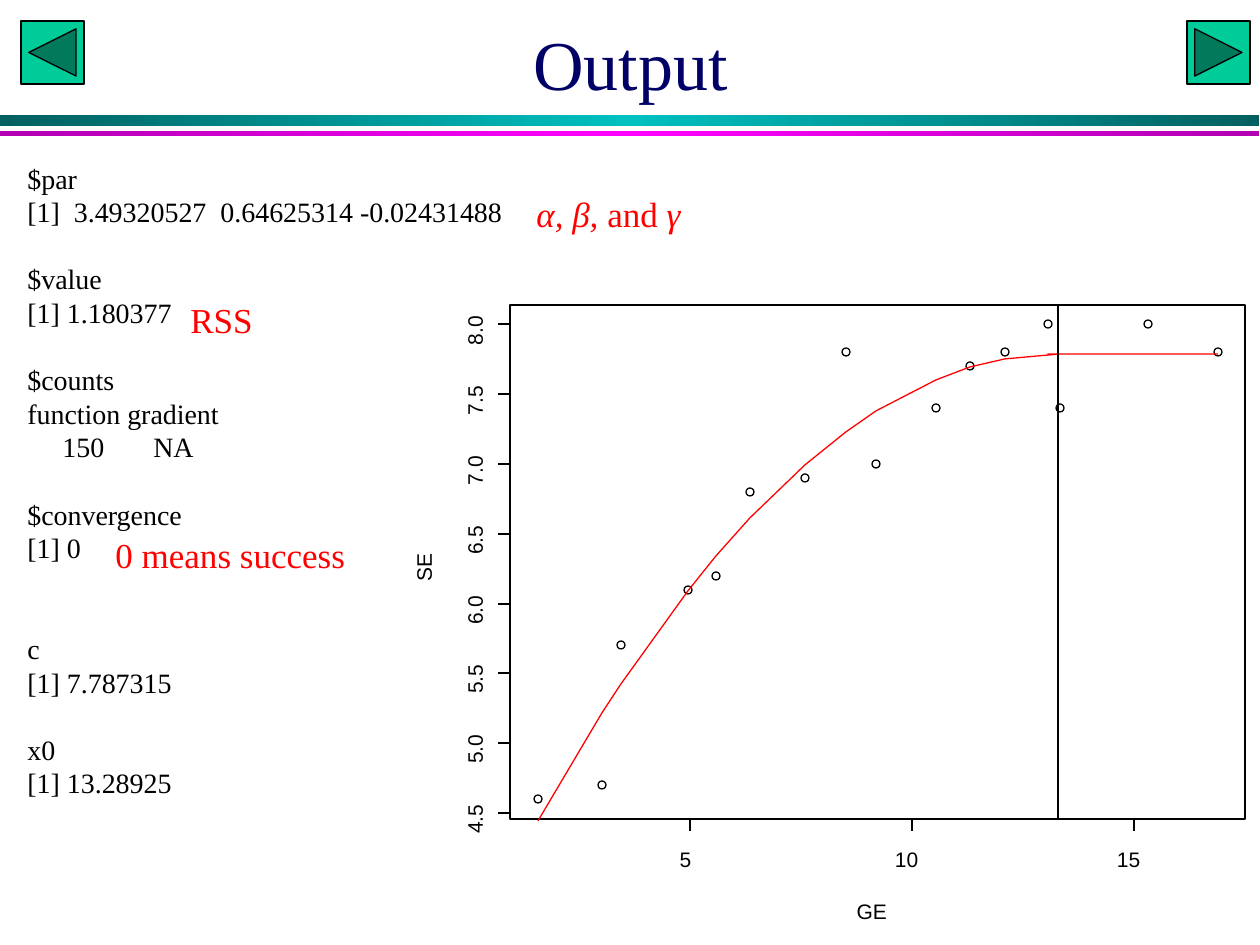
"""Build the Output slide: fitted parameters beside a plateau curve of SE against GE."""
from copy import deepcopy

from lxml.etree import SubElement
from pptx import Presentation
from pptx.dml.color import RGBColor
from pptx.enum.shapes import MSO_CONNECTOR, MSO_SHAPE
from pptx.enum.text import MSO_ANCHOR, PP_ALIGN
from pptx.oxml.ns import qn
from pptx.util import Pt

EMU_PER_PX = 914400 / 126
BLACK = RGBColor(0x00, 0x00, 0x00)
RED = RGBColor(0xFF, 0x00, 0x00)
NAVY = RGBColor(0x00, 0x00, 0x66)
GREEN = RGBColor(0x00, 0xCC, 0x99)
DARK_TEAL = RGBColor(0x00, 0x60, 0x60)
TEAL = RGBColor(0x00, 0xC0, 0xC0)
PURPLE = RGBColor(0xB2, 0x00, 0xB2)
MAGENTA = RGBColor(0xFF, 0x00, 0xFF)
SERIF, SANS = "Times New Roman", "Arial"

ALPHA, BETA, GAMMA = 3.49, 0.65, -0.02
ALPHA, BETA, GAMMA = 3.49320527, 0.64625314, -0.02431488
PLATEAU, BREAK_GE = 7.787315, 13.28925
OBSERVATIONS = [
    (1.56, 4.6), (3.0, 4.7), (3.43, 5.7), (4.94, 6.1),
    (5.58, 6.2), (6.34, 6.8), (7.58, 6.9), (8.5, 7.8),
    (9.19, 7.0), (10.54, 7.4), (11.31, 7.7), (12.1, 7.8),
    (13.33, 7.4), (13.06, 8.0), (15.33, 8.0), (16.91, 7.8),
]
OUTPUT_BLOCKS = [
    (0, ["$par", "[1]  3.49320527  0.64625314 -0.02431488"]),
    (1, ["$value", "[1] 1.180377"]),
    (1, ["$counts", "function gradient", "\t150\tNA"]),
    (1, ["$convergence", "[1] 0"]),
    (2, ["c", "[1] 7.787315"]),
    (1, ["x0", "[1] 13.28925"]),
]
COUNT_TABS = (35, 126)
LINE_PT = 19.2
PLOT_LEFT, PLOT_TOP, PLOT_WIDTH, PLOT_HEIGHT = 510, 305, 735, 514
PLOT_BOTTOM = PLOT_TOP + PLOT_HEIGHT
TICK = 12


def px(length):
    """Turn px into EMU."""
    return round(length * EMU_PER_PX)


def ge_px(ge):
    """Place a GE value on the horizontal axis."""
    return round(469 + 44.3 * ge)


def se_px(se):
    """Place an SE value on the vertical axis."""
    return round(1440.5 - 139.5 * se)


def fitted_se(ge):
    """Return the quadratic fit, level beyond the break."""
    return ALPHA + BETA * ge + GAMMA * ge ** 2 if ge < BREAK_GE else PLATEAU


class SlidePainter:
    """Hold the line style and the current slide."""

    def __init__(self, page, line_color=BLACK, line_width=Pt(0.75)):
        """Keep the slide and the shared line style."""
        self.page = page
        self.line_color = line_color
        self.line_width = line_width

    def outline(self, item, color=None):
        """Give a shape or connector the shared line."""
        item.line.color.rgb = color or self.line_color
        item.line.width = self.line_width

    def shape(self, kind, left, top, width, height, fill=None):
        """Add an outlined preset shape."""
        shape = self.page.shapes.add_shape(kind, px(left), px(top), px(width), px(height))
        shape.shadow.inherit = False
        if fill:
            shape.fill.solid()
            shape.fill.fore_color.rgb = fill
        else:
            shape.fill.background()
        self.outline(shape)
        return shape

    def gradient_band(self, top, height, edge, middle):
        """Add a full-width band that is brightest in the middle."""
        band = self.shape(MSO_SHAPE.RECTANGLE, 0, top, 1259, height)
        band.line.fill.background()
        band.fill.gradient()
        band.fill.gradient_angle = 0
        stop_list = band.element.spPr.find(qn("a:gradFill")).find(qn("a:gsLst"))
        stop_list.insert(1, deepcopy(stop_list[0]))
        stops = zip(band.fill.gradient_stops, (0, 0.5, 1), (edge, middle, edge))
        for stop, position, color in stops:
            stop.position = position
            stop.color.rgb = color

    def line(self, x1, y1, x2, y2):
        """Add a straight line."""
        line = self.page.shapes.add_connector(
            MSO_CONNECTOR.STRAIGHT, px(x1), px(y1), px(x2), px(y2))
        self.outline(line)
        SubElement(line.element.spPr, qn("a:effectLst"))

    def curve(self, points, color):
        """Add an open line through the points."""
        builder = self.page.shapes.build_freeform(*points[0], scale=EMU_PER_PX)
        builder.add_line_segments(points[1:], close=False)
        curve = builder.convert_to_shape()
        curve.shadow.inherit = False
        curve.fill.background()
        self.outline(curve, color)

    def text(self, left, top, width, height, spans, size, color=BLACK, font=SERIF):
        """Add a one-line text box from (text, italic) spans."""
        box = self.page.shapes.add_textbox(px(left), px(top), px(width), px(height))
        box.text_frame.word_wrap = True
        para = box.text_frame.paragraphs[0]
        for words, italic in spans:
            span = para.add_run()
            span.text = words
            span.font.italic = italic
            self.style(span.font, size, color, font)
        return box

    def style(self, face, size, color, font):
        """Set size, colour and name of a font."""
        face.size = Pt(size)
        face.color.rgb = color
        face.name = font

    def axis_label(self, center_x, center_y, width, words, rotation=0):
        """Add a label without margins, centred on a point."""
        box = self.text(center_x - width / 2, center_y - 15, width, 30,
                        [(words, False)], 12, font=SANS)
        frame = box.text_frame
        frame.margin_left = frame.margin_right = frame.margin_top = frame.margin_bottom = 0
        box.rotation = rotation

    def listing(self, left, top, width, height, blocks):
        """Add output lines, with whole-line gaps before blocks."""
        box = self.page.shapes.add_textbox(px(left), px(top), px(width), px(height))
        frame = box.text_frame
        frame.word_wrap = True
        frame.text = "\n".join(words for _, lines in blocks for words in lines)
        gaps = [gap if index == 0 else 0 for gap, lines in blocks for index in range(len(lines))]
        for para, gap in zip(frame.paragraphs, gaps):
            para.line_spacing = Pt(LINE_PT)
            para.space_before = Pt(LINE_PT * gap)
            for span in para.runs:
                self.style(span.font, 16, BLACK, SERIF)
            if "\t" in para.text:
                tabs = SubElement(para._p.get_or_add_pPr(), qn("a:tabLst"))
                for position in COUNT_TABS:
                    SubElement(tabs, qn("a:tab"), pos=str(px(position)), algn="l")


def draw_plot(painter):
    """Draw the observations, axes, fit and break line."""
    for ge, se in OBSERVATIONS:
        painter.shape(MSO_SHAPE.OVAL, ge_px(ge) - 4, se_px(se) - 4, 8, 8)
    painter.line(ge_px(5), PLOT_BOTTOM, ge_px(15), PLOT_BOTTOM)
    for ge in (5, 10, 15):
        painter.line(ge_px(ge), PLOT_BOTTOM, ge_px(ge), PLOT_BOTTOM + TICK)
        painter.axis_label(ge_px(ge), 862, 21 if ge < 10 else 34, str(ge))
    painter.line(PLOT_LEFT, se_px(4.5), PLOT_LEFT, se_px(8))
    for step in range(8):
        se = 4.5 + step / 2
        painter.line(PLOT_LEFT, se_px(se), PLOT_LEFT - TICK, se_px(se))
        painter.axis_label(477, se_px(se), 42, f"{se:.1f}", 270)
    painter.shape(MSO_SHAPE.RECTANGLE, PLOT_LEFT, PLOT_TOP, PLOT_WIDTH, PLOT_HEIGHT)
    painter.axis_label(878, 914, 43, "GE")
    painter.axis_label(426, 561, 40, "SE", 270)
    painter.curve([(ge_px(ge), se_px(fitted_se(ge))) for ge, _ in OBSERVATIONS], RED)
    painter.line(ge_px(BREAK_GE), PLOT_BOTTOM, ge_px(BREAK_GE), PLOT_TOP)


def main():
    """Build and save the deck."""
    deck = Presentation()
    deck.slide_width, deck.slide_height = px(1260), px(945)
    painter = SlidePainter(deck.slides.add_slide(deck.slide_layouts[6]))
    painter.gradient_band(115, 11, DARK_TEAL, TEAL)
    painter.gradient_band(131, 5, PURPLE, MAGENTA)
    painter.shape(MSO_SHAPE.ACTION_BUTTON_BACK_OR_PREVIOUS, 21, 21, 63, 63, GREEN)
    painter.shape(MSO_SHAPE.ACTION_BUTTON_FORWARD_OR_NEXT, 1187, 21, 63, 63, GREEN)
    title = painter.text(95, 0, 1071, 126, [("Output", False)], 40, NAVY)
    title.text_frame.vertical_anchor = MSO_ANCHOR.MIDDLE
    title.text_frame.paragraphs[0].alignment = PP_ALIGN.CENTER
    painter.listing(15, 155, 515, 726, OUTPUT_BLOCKS)
    draw_plot(painter)
    painter.text(178, 292, 126, 55, [("RSS", False)], 20, RED)
    painter.text(524, 186, 232, 55, [("α, β, ", True), ("and ", False), ("γ", True)], 20, RED)
    painter.text(103, 527, 284, 55, [("0 means success", False)], 20, RED)
    deck.save("out.pptx")


if __name__ == "__main__":
    main()
